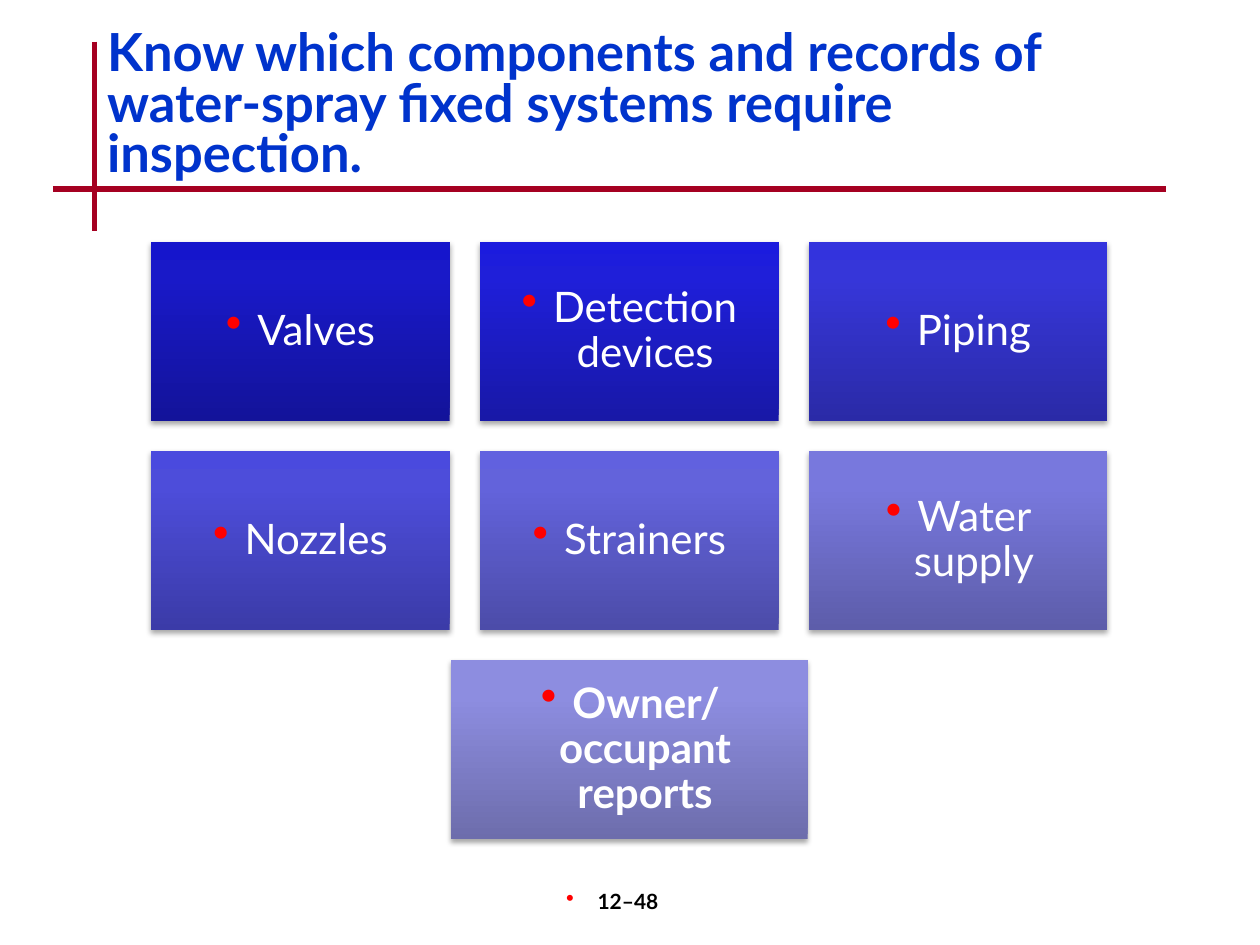
import copy

import pptx
import pptx.dml.color
import pptx.enum.shapes
import pptx.enum.text
import pptx.oxml
import pptx.oxml.ns
import pptx.util

Inches = pptx.util.Inches
Pt = pptx.util.Pt
qn = pptx.oxml.ns.qn
ALIGN = pptx.enum.text.PP_ALIGN
ANCHOR = pptx.enum.text.MSO_ANCHOR

ROWS = [
    [("Valves", ("13139A", "1919C8", "1515CC")),
     ("Detection devices", ("1818A7", "1F1FD9", "1B1BDE")),
     ("Piping", ("2A2AA7", "3636D9", "3333DD"))],
    [("Nozzles", ("3B3BA8", "4D4DDA", "4A4ADE")),
     ("Strainers", ("4C4CA9", "6363DB", "6161DF")),
     ("Water supply", ("5D5DAA", "7878DD", "7777E0"))],
    [("Owner/occupant reports", ("6D6DAC", "8D8DE0", "8C8CE2"))],
]


def rgb(value):
    """Turn a hex string into a colour."""
    return pptx.dml.color.RGBColor.from_string(value)


def add_xml(parent, xml):
    """Append one element of the drawing namespace to a parent."""
    ns = pptx.oxml.ns.nsdecls("a")
    parent.append(pptx.oxml.parse_xml(xml.replace(" ", f" {ns} ", 1)))


def set_font(p, size, color, bold):
    """Set the font of a whole paragraph."""
    p.font.name = "Lato"
    p.font.size = Pt(size)
    p.font.bold = bold
    p.font.color.rgb = rgb(color)


def add_bullet(p):
    """Give a paragraph a hanging red bullet."""
    pPr = p._p.get_or_add_pPr()
    pPr.set("marL", str(Inches(0.25)))
    pPr.set("indent", str(-Inches(0.25)))
    add_xml(pPr, '<a:buClr ><a:srgbClr val="FF0000"/></a:buClr>')
    add_xml(pPr, '<a:buSzPct val="110000"/>')
    add_xml(pPr, '<a:buChar char="•"/>')


def add_rule(slide, x1, y1, x2, y2):
    """Draw one red rule of the title frame."""
    line = slide.shapes.add_connector(
        pptx.enum.shapes.MSO_CONNECTOR.STRAIGHT,
        Inches(x1), Inches(y1), Inches(x2), Inches(y2))
    line.line.color.rgb = rgb("A50021")
    line.line.width = Pt(3)
    add_xml(line._element.spPr, "<a:effectLst />")


def add_title(slide, x, y, w, h):
    """Place the title and the crossed rules beside and below it."""
    add_rule(slide, x, y + 0.13, x, y + 1.63)
    add_rule(slide, x - 0.33, y + 1.3, x + w, y + 1.3)
    sp = slide.shapes.title
    sp.left, sp.top, sp.width, sp.height = map(Inches, (x, y, w, h))
    tf = sp.text_frame
    tf.text = ("Know which components and records of water-spray fixed "
               "systems require inspection.")
    tf.word_wrap = True
    tf.auto_size = pptx.enum.text.MSO_AUTO_SIZE.NONE
    tf.vertical_anchor = ANCHOR.TOP
    p = tf.paragraphs[0]
    p.alignment = ALIGN.LEFT
    p.line_spacing = 0.8
    set_font(p, 30, "0033CC", True)


def add_card(slide, x, y, w, h, text, colors, bold):
    """Draw one shaded card with a bulleted label."""
    sp = slide.shapes.add_shape(
        pptx.enum.shapes.MSO_SHAPE.RECTANGLE,
        Inches(x), Inches(y), Inches(w), Inches(h))
    sp.line.fill.background()
    sp.fill.gradient()
    sp.fill.gradient_angle = 90
    spPr = sp._element.spPr
    stops = spPr.find(".//" + qn("a:gsLst"))
    stops.append(copy.deepcopy(stops[0]))
    for stop, position, color in zip(sp.fill.gradient_stops, (0, 0.8, 1), colors):
        stop.position = position
        stop.color.rgb = rgb(color)
    sp.shadow.inherit = False
    add_xml(spPr.find(qn("a:effectLst")),
            f'<a:outerShdw blurRad="{Pt(3.1)}" dist="{Pt(1.8)}" dir="5400000" '
            'rotWithShape="0"><a:srgbClr val="000000"><a:alpha val="35000"/>'
            '</a:srgbClr></a:outerShdw>')
    tf = sp.text_frame
    tf.text = text
    tf.word_wrap = True
    tf.vertical_anchor = ANCHOR.MIDDLE
    tf.margin_left = tf.margin_right = Inches(0.1)
    tf.margin_top = tf.margin_bottom = Inches(0.1)
    p = tf.paragraphs[0]
    add_bullet(p)
    p.alignment = ALIGN.CENTER
    p.line_spacing = 0.9
    set_font(p, 24, "FFFFFF", bold)


def add_cards(slide, x, y, w, h):
    """Lay out the rows of cards, each row centred in the box."""
    gap = 0.24
    card_h = (h - gap * (len(ROWS) - 1)) / len(ROWS)
    for i, row in enumerate(ROWS):
        single = len(row) == 1
        card_w = 2.83 if single else 2.37
        left = x + (w - len(row) * card_w - (len(row) - 1) * gap) / 2
        for j, (text, colors) in enumerate(row):
            add_card(slide, left + j * (card_w + gap), y + i * (card_h + gap),
                     card_w, card_h, text, colors, single)


def add_page_number(slide, x, y, w, h):
    """Place the chapter and page number."""
    sp = slide.shapes.add_textbox(Inches(x), Inches(y), Inches(w), Inches(h))
    tf = sp.text_frame
    tf.text = "12–48"
    tf.word_wrap = True
    tf.margin_right = Inches(0.3)
    p = tf.paragraphs[0]
    add_bullet(p)
    p.alignment = ALIGN.CENTER
    set_font(p, 12, "000000", True)


def main():
    """Build and save the slide."""
    prs = pptx.Presentation()
    prs.slide_width, prs.slide_height = Inches(10), Inches(7.5)
    slide = prs.slides.add_slide(prs.slide_layouts[5])
    add_title(slide, 0.75, 0.2, 8.5, 1)
    add_cards(slide, 1.2, 1.92, 7.59, 4.74)
    add_page_number(slide, 3.92, 7, 2.08, 0.5)
    prs.save("out.pptx")


if __name__ == "__main__":
    main()
